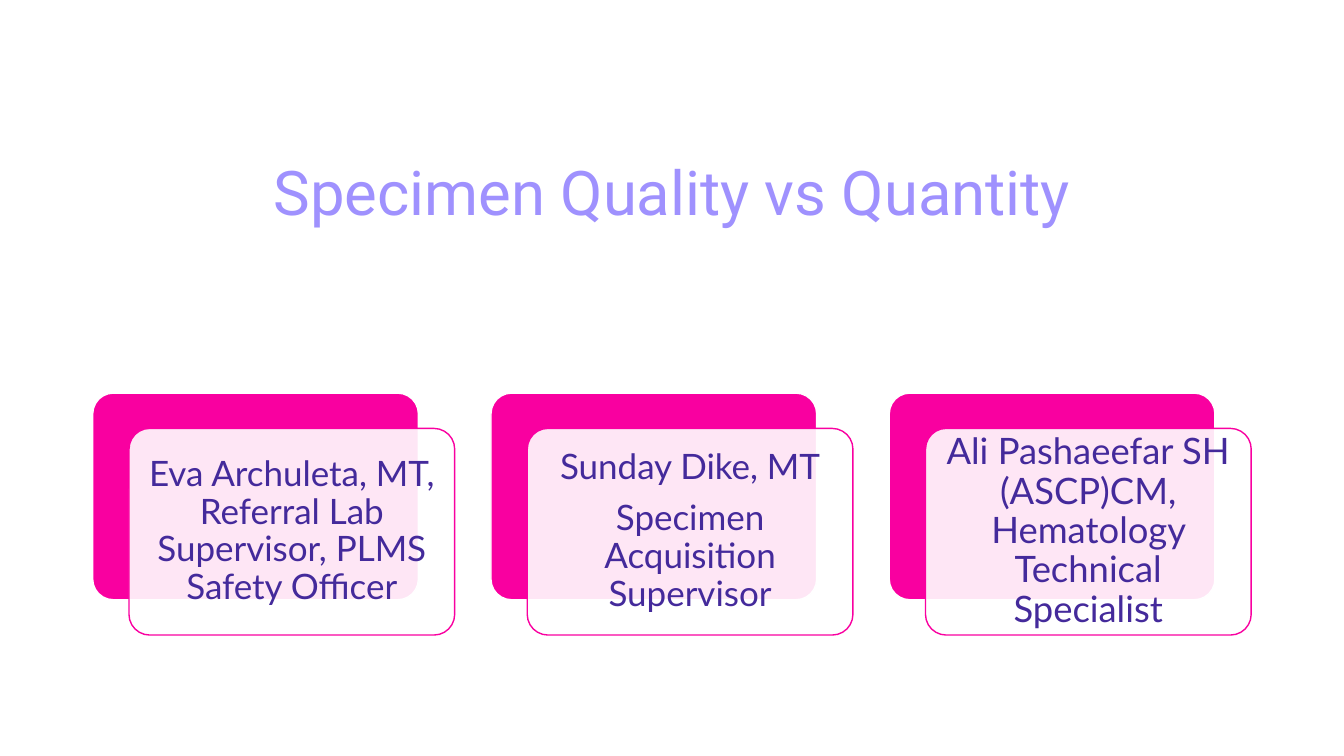
from dataclasses import dataclass

from pptx import Presentation
from pptx.dml.color import RGBColor
from pptx.enum.shapes import MSO_SHAPE as Shape
from pptx.enum.text import MSO_ANCHOR as Anchor, PP_ALIGN as Align
from pptx.oxml.ns import qn
from pptx.util import Inches, Pt
from lxml.etree import SubElement

TITLE = "Specimen Quality vs Quantity"
SPEAKERS = [
    ("Eva Archuleta, MT, Referral Lab Supervisor, PLMS Safety Officer",),
    ("Sunday Dike, MT", "Specimen Acquisition Supervisor"),
    ("Ali Pashaeefar SH (ASCP)CM, Hematology Technical Specialist",),
]


@dataclass(frozen=True)
class Theme:
    white: RGBColor = RGBColor(0xFF, 0xFF, 0xFF)
    pink: RGBColor = RGBColor(0xF9, 0x00, 0xA0)
    purple: RGBColor = RGBColor(0x44, 0x2A, 0x9B)
    lilac: RGBColor = RGBColor(0x9F, 0x91, 0xFE)
    title_font: str = "Roboto"
    body_font: str = "Lato"
    title_size: int = 44
    body_sizes: tuple = (25, 25, 26)


THEME = Theme()
CARD_WIDTH, CARD_HEIGHT = 3.23, 2.05
FIRST_LEFT, CARD_TOP, CARD_STEP = 0.92, 3.9, 3.95
FRONT_OFFSET = (0.36, 0.35)


def style_paragraph(para, font, size, color):
    para.alignment = Align.CENTER
    para.line_spacing = 0.9
    for span in para.runs:
        span.font.name = font
        span.font.size = Pt(size)
        span.font.color.rgb = color


def add_title(slide):
    title = slide.shapes.title
    title.left, title.top = Inches(0.92), Inches(0.67)
    title.width, title.height = Inches(11.5), Inches(2.54)
    frame = title.text_frame
    frame.text = TITLE
    frame.vertical_anchor = Anchor.MIDDLE
    style_paragraph(frame.paragraphs[0], THEME.title_font, THEME.title_size, THEME.lilac)


def add_panel(slide, left, top, fill, line):
    panel = slide.shapes.add_shape(
        Shape.ROUNDED_RECTANGLE, Inches(left), Inches(top), Inches(CARD_WIDTH), Inches(CARD_HEIGHT)
    )
    panel.adjustments[0] = 0.1
    panel.shadow.inherit = False
    panel.fill.solid()
    panel.fill.fore_color.rgb = fill
    panel.line.color.rgb = line
    panel.line.width = Pt(1)
    return panel


def set_opacity(shape, percent):
    color = shape.fill._xPr.find(qn("a:solidFill"))[0]
    SubElement(color, qn("a:alpha")).set("val", str(percent * 1000))


def add_speaker(slide, index, lines):
    """Place a pink panel with a translucent white text card shifted over it."""
    left = FIRST_LEFT + index * CARD_STEP
    add_panel(slide, left, CARD_TOP, THEME.pink, THEME.white)
    card = add_panel(slide, left + FRONT_OFFSET[0], CARD_TOP + FRONT_OFFSET[1], THEME.white, THEME.pink)
    set_opacity(card, 90)

    frame = card.text_frame
    frame.word_wrap = True
    frame.vertical_anchor = Anchor.MIDDLE
    frame.margin_left = frame.margin_right = Inches(0.1)
    frame.margin_top = frame.margin_bottom = Inches(0.1)
    frame.text = "\n".join(lines)
    for para in frame.paragraphs:
        style_paragraph(para, THEME.body_font, THEME.body_sizes[index], THEME.purple)
    for para in frame.paragraphs[:-1]:
        para.space_after = Pt(9.5)


def main():
    deck = Presentation()
    deck.slide_width, deck.slide_height = Inches(13.33), Inches(7.5)
    slide = deck.slides.add_slide(deck.slide_layouts[0])
    slide.background.fill.solid()
    slide.background.fill.fore_color.rgb = THEME.white
    subtitle = slide.placeholders[1].element
    subtitle.getparent().remove(subtitle)

    add_title(slide)
    for index, lines in enumerate(SPEAKERS):
        add_speaker(slide, index, lines)
    deck.save("out.pptx")


if __name__ == "__main__":
    main()
